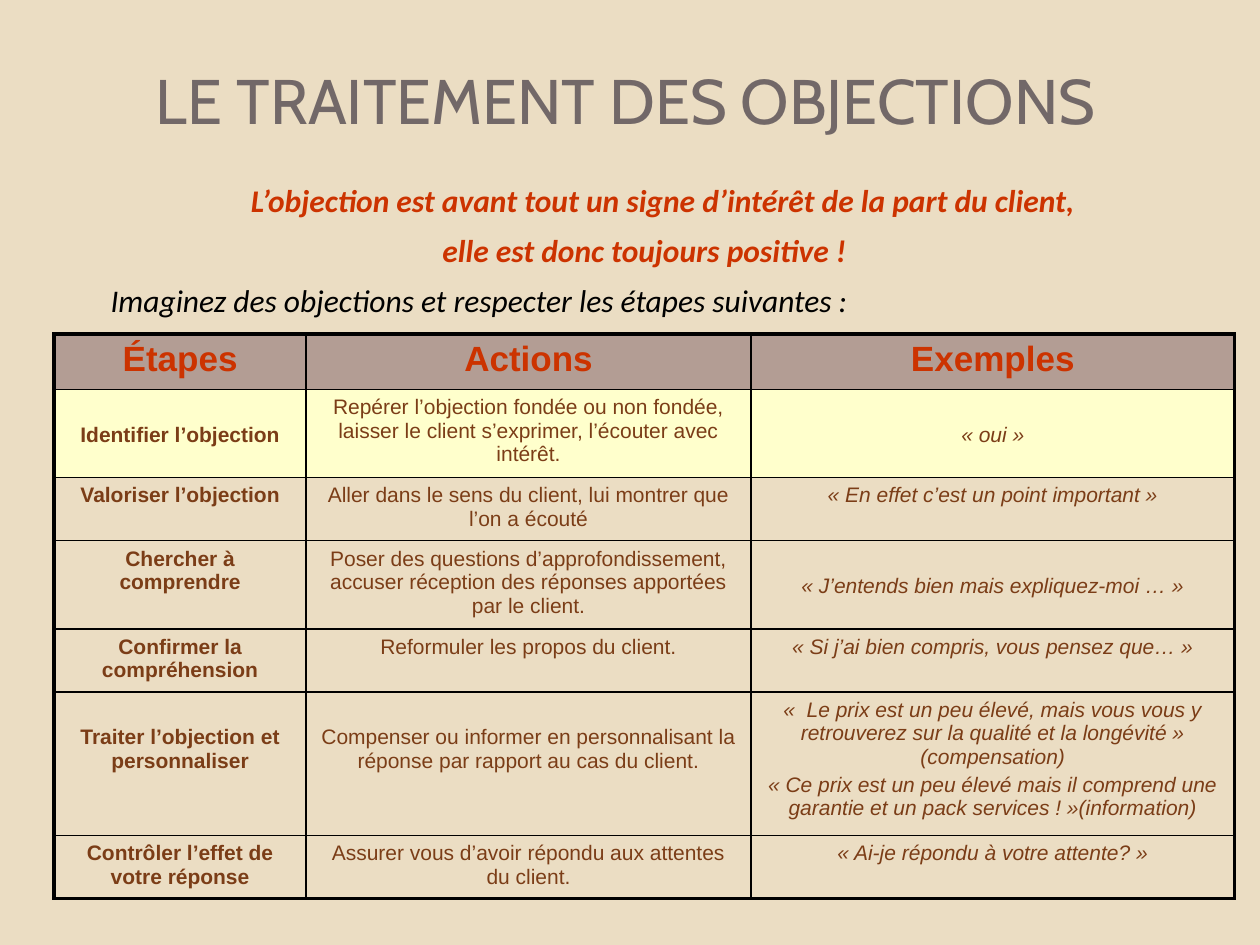
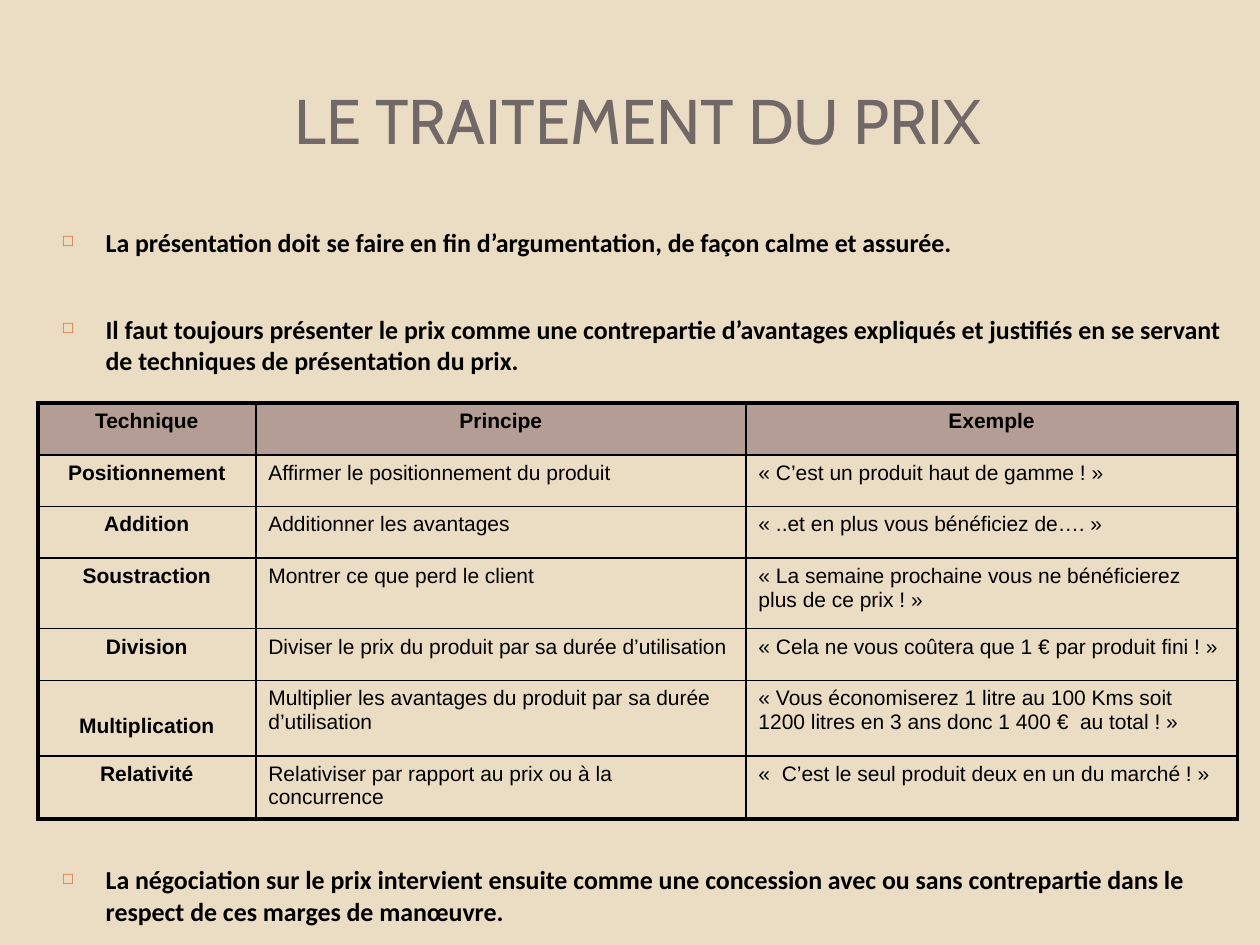
from lxml import etree
from pptx import Presentation
from pptx.dml.color import RGBColor
from pptx.enum import text as tx
from pptx.oxml import ns
from pptx.util import Inches, Pt

COLORS = {
    "sand": "EBDDC3", "title": "726868", "head": "B39D94", "pale": "FFFFCC",
    "red": "CC3300", "brown": "7B3D17", "black": "000000", "bullet": "DD8047",
}
LEFT, MID = tx.PP_ALIGN.LEFT, tx.PP_ALIGN.CENTER
THIN, THICK = 1, 2.25
GAP = 2.4  # space between paragraphs of a cell
DROP = 0.27  # top margin of a cell whose text starts one line lower


def rgb(name):
    return RGBColor.from_string(COLORS[name])


def sub(parent, tag, **attrs):
    return etree.SubElement(parent, ns.qn(tag), attrs)


def add_run(par, words, font, size, color, bold=False, italic=False):
    run = par.add_run()
    run.text = words
    run.font.name, run.font.size = font, Pt(size)
    run.font.bold, run.font.italic = bold, italic
    run.font.color.rgb = rgb(color)


def add_frame(slide, box, wrap=True):
    frame = slide.shapes.add_textbox(*map(Inches, box)).text_frame
    frame.word_wrap = wrap
    return frame


def next_par(frame, first):
    return frame.paragraphs[0] if first else frame.add_paragraph()


def add_title(slide, box, words):
    par = add_frame(slide, box, wrap=False).paragraphs[0]
    par.alignment = MID
    add_run(par, words, "Cabin", 36, "title")


def add_intro(slide, box, lines):
    """Italic lines, each given as words, colour, bold, alignment and indent."""
    frame = add_frame(slide, box)
    for i, (words, color, bold, align, indent) in enumerate(lines):
        par = next_par(frame, i == 0)
        par.alignment, par.space_before = align, Pt(7)
        par._p.get_or_add_pPr().set("marL", str(Inches(indent)))
        add_run(par, words, "Calibri", 18, color, bold, True)


def add_bullets(slide, box, items):
    """Bold bullets, each given as words and the space before it."""
    frame = add_frame(slide, box)
    for i, (words, space) in enumerate(items):
        par = next_par(frame, i == 0)
        par.space_before = Pt(space)
        props = par._p.get_or_add_pPr()
        props.set("marL", str(Inches(0.35)))
        props.set("indent", str(-Inches(0.35)))
        sub(sub(props, "a:buClr"), "a:srgbClr", val=COLORS["bullet"])
        sub(props, "a:buSzPct", val="60000")
        sub(props, "a:buChar", char="◻")
        add_run(par, words, "Calibri", 14.8, "black", True)


def set_borders(cell, row, col, rows, cols):
    """Thick lines on the rim of the table, thin ones inside."""
    rim = {"L": col == 0, "R": col == cols - 1, "T": row == 0, "B": row == rows - 1}
    props = cell._tc.get_or_add_tcPr()
    for side, outer in rim.items():
        line = sub(props, f"a:ln{side}", w=str(Pt(THICK if outer else THIN)))
        sub(sub(line, "a:solidFill"), "a:srgbClr", val=COLORS["black"])


def add_grid(slide, spot, widths, heights, cells, look):
    """Table whose cells hold words, or a list of words per paragraph."""
    size = len(heights), len(widths)
    box = (*spot, sum(widths), sum(heights))
    table = slide.shapes.add_table(*size, *map(Inches, box)).table
    table.first_row = table.horz_banding = False
    for part, width in zip(table.columns, widths):
        part.width = Inches(width)
    for part, height in zip(table.rows, heights):
        part.height = Inches(height)
    for r, line in enumerate(cells):
        for c, words in enumerate(line):
            cell = table.cell(r, c)
            set_borders(cell, r, c, *size)
            fill = "head" if r == 0 else look["fills"].get(r)
            if fill:
                cell.fill.solid()
                cell.fill.fore_color.rgb = rgb(fill)
            else:
                cell.fill.background()
            if (r, c) in look["drops"]:
                cell.margin_top = Inches(DROP)
            top = r == 0
            style = look["head"] if top else look["body"]
            for i, part in enumerate([words] if isinstance(words, str) else words):
                par = next_par(cell.text_frame, i == 0)
                par.alignment = MID if top or c == 0 else look["align"]
                if i:
                    par.space_before = Pt(GAP)
                add_run(par, part, "Arial", *style, bold=top or c == 0,
                        italic=look["italic"] and not top and c == 2)


def add_page(deck):
    slide = deck.slides.add_slide(deck.slide_layouts[6])
    slide.background.fill.solid()
    slide.background.fill.fore_color.rgb = rgb("sand")
    return slide


def build_doubts(deck):
    slide = add_page(deck)
    add_intro(slide, (0.43, 1.39, 9.37, 1.18), [
        ("L’objection est avant tout un signe d’intérêt de la part du client, ",
         "red", True, MID, 0.35),
        ("elle est donc toujours positive !", "red", True, MID, 0),
        ("Imaginez des objections et respecter les étapes suivantes :",
         "black", False, LEFT, 0.35),
    ])
    cells = [
        ("Étapes", "Actions", "Exemples"),
        ("Identifier l’objection",
         "Repérer l’objection fondée ou non fondée, laisser le client s’exprimer, "
         "l’écouter avec intérêt.", "« oui »"),
        ("Valoriser l’objection",
         "Aller dans le sens du client, lui montrer que l’on a écouté",
         "« En effet c’est un point important »"),
        ("Chercher à comprendre",
         "Poser des questions d’approfondissement, accuser réception des réponses "
         "apportées par le client.", "« J’entends bien mais expliquez-moi … »"),
        ("Confirmer la compréhension", "Reformuler les propos du client.",
         "« Si j’ai bien compris, vous pensez que… »"),
        ("Traiter l’objection et personnaliser",
         "Compenser ou informer en personnalisant la réponse par rapport au cas "
         "du client.",
         ["«  Le prix est un peu élevé, mais vous vous y retrouverez sur la qualité "
          "et la longévité » (compensation)",
          "« Ce prix est un peu élevé mais il comprend une garantie et un pack "
          "services ! »(information)"]),
        ("Contrôler l’effet de votre réponse",
         "Assurer vous d’avoir répondu aux attentes du client.",
         "« Ai-je répondu à votre attente? »"),
    ]
    add_grid(slide, (0.43, 2.65), (2, 3.53, 3.84),
             (0.44, 0.7, 0.5, 0.7, 0.5, 1.14, 0.5), cells,
             {"head": (20, "red"), "body": (12, "brown"), "align": MID,
              "italic": True, "fills": {1: "pale"},
              "drops": {(1, 0), (1, 2), (3, 2), (5, 0), (5, 1)}})
    add_title(slide, (1.02, 0.44, 7.89, 0.62), "LE TRAITEMENT DES OBJECTIONS")


def build_price(deck):
    slide = add_page(deck)
    add_bullets(slide, (0.39, 1.75, 9.61, 5.47), [
        ("La présentation doit se faire en fin d’argumentation, de façon calme et "
         "assurée.", 7),
        ("Il faut toujours présenter le prix comme une contrepartie d’avantages "
         "expliqués et justifiés en se servant de techniques de présentation du "
         "prix.", 32),
        ("La négociation sur le prix intervient ensuite comme une concession avec "
         "ou sans contrepartie dans le respect de ces marges de manœuvre.", 279),
    ])
    cells = [
        ("Technique", "Principe", "Exemple"),
        ("Positionnement", "Affirmer le positionnement du produit",
         "« C’est un produit haut de gamme ! »"),
        ("Addition", "Additionner les avantages",
         "« ..et en plus vous bénéficiez de…. »"),
        ("Soustraction", "Montrer ce que perd le client",
         "« La semaine prochaine vous ne bénéficierez plus de ce prix ! »"),
        ("Division", "Diviser le prix du produit par sa durée d’utilisation",
         "« Cela ne vous coûtera que 1 € par produit fini ! »"),
        ("Multiplication",
         "Multiplier les avantages du produit par sa durée d’utilisation",
         "« Vous économiserez 1 litre au 100 Kms soit 1200 litres en 3 ans donc "
         "1 400 €  au total ! »"),
        ("Relativité", "Relativiser par rapport au prix ou à la concurrence",
         "«  C’est le seul produit deux en un du marché ! »"),
    ]
    add_grid(slide, (0.3, 3.2), (1.73, 3.89, 3.9),
             (0.41, 0.41, 0.41, 0.56, 0.41, 0.6, 0.41), cells,
             {"head": (12, "black"), "body": (12, "black"), "align": LEFT,
              "italic": False, "fills": {}, "drops": {(5, 0)}})
    add_title(slide, (0.83, 0.6, 8.47, 0.71), "LE TRAITEMENT DU PRIX")


def main():
    deck = Presentation()
    deck.slide_width, deck.slide_height = Inches(10), Inches(7.5)
    build_doubts(deck)
    build_price(deck)
    deck.save("out.pptx")


if __name__ == "__main__":
    main()
